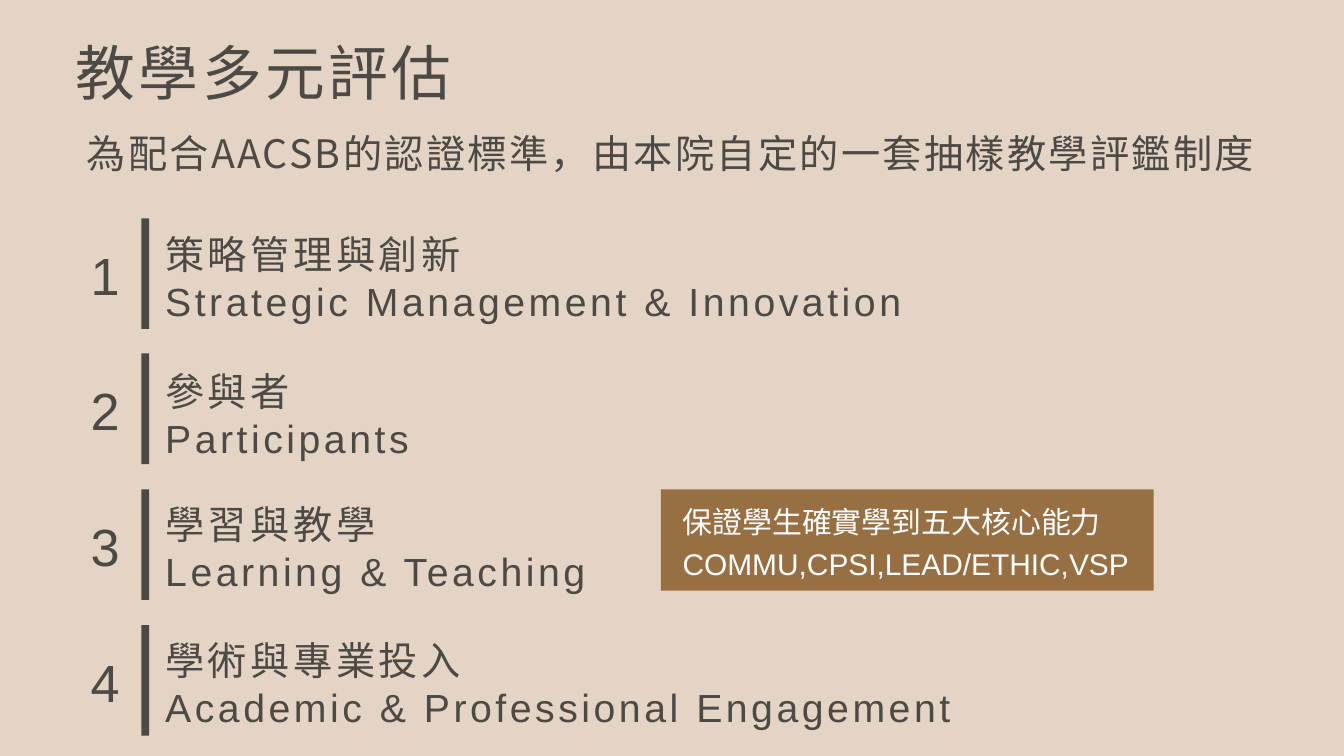
from lxml import etree
from pptx import Presentation
from pptx.dml.color import RGBColor
from pptx.enum.shapes import MSO_SHAPE
from pptx.enum.text import PP_ALIGN
from pptx.oxml.ns import qn
from pptx.util import Pt

PX = 9525
RECTANGLE = MSO_SHAPE.RECTANGLE
LEFT, RIGHT, JUSTIFY = PP_ALIGN.LEFT, PP_ALIGN.RIGHT, PP_ALIGN.JUSTIFY
SAND = RGBColor(0xE4, 0xD4, 0xC5)
CHARCOAL = RGBColor(0x4D, 0x4A, 0x46)
BROWN = RGBColor(0x98, 0x6F, 0x43)
WHITE = RGBColor(0xFF, 0xFF, 0xFF)
CHINESE, ENGLISH = "Noto Sans CJK SC", "Arial"

TITLE = {"size": 64, "line": 78.7, "tracking": 380}
INTRO = {"size": 42, "line": 51.7, "tracking": 250}
NUMBER = {"size": 56, "line": 68.9, "tracking": 340, "align": RIGHT}
HEADING = {"size": 42, "line": 68, "tracking": 380, "align": JUSTIFY}
NOTE = {"size": 32, "line": 44.8, "color": WHITE}

STANDARDS = [
    ("策略管理與創新", "Strategic Management & Innovation", -7),
    ("參與者", "Participants", -4),
    ("學習與教學", "Learning & Teaching", -8),
    ("學術與專業投入", "Academic & Professional Engagement", -7),
]
FIRST_ROW = 312
FOUR_ROWS_SPAN = 581


class SlideBuilder:
    def __init__(self, slide):
        self.slide = slide
        fill = slide.background.fill
        fill.solid()
        fill.fore_color.rgb = SAND

    def rectangle(self, left, top, width, height, color):
        box = [value * PX for value in (left, top, width, height)]
        shape = self.slide.shapes.add_shape(RECTANGLE, *box)
        shape.shadow.inherit = False
        shape.fill.solid()
        shape.fill.fore_color.rgb = color
        shape.line.fill.background()

    def text(self, left, top, width, height, lines, style):
        box = [value * PX for value in (left, top, width, height)]
        frame = self.slide.shapes.add_textbox(*box).text_frame
        frame_format = {"word_wrap": True, "margin_left": 0, "margin_top": 0,
                        "margin_right": 0, "margin_bottom": 0}
        for name, value in frame_format.items():
            setattr(frame, name, value)
        for index, (words, font_name) in enumerate(lines):
            paragraph = frame.add_paragraph() if index else frame.paragraphs[0]
            paragraph.alignment = style.get("align", LEFT)
            paragraph.line_spacing = Pt(style["line"])
            run = paragraph.add_run()
            run.text = words
            font_format = {"size": Pt(style["size"]), "name": font_name}
            for name, value in font_format.items():
                setattr(run.font, name, value)
            run.font.color.rgb = style.get("color", CHARCOAL)
            properties = run._r.get_or_add_rPr()
            properties.set("spc", str(style.get("tracking", 0)))
            east_asian = etree.SubElement(properties, qn("a:ea"))
            east_asian.set("typeface", font_name)


def main():
    presentation = Presentation()
    presentation.slide_width = 1920 * PX
    presentation.slide_height = 1080 * PX
    builder = SlideBuilder(presentation.slides.add_slide(presentation.slide_layouts[6]))

    builder.text(108, 49, 1079, 107, [("教學多元評估", CHINESE)], TITLE)
    intro = "為配合AACSB的認證標準，由本院自定的一套抽樣教學評鑑制度"
    builder.text(124, 183, 1673, 70, [(intro, CHINESE)], INTRO)

    for index, (chinese, english, offset) in enumerate(STANDARDS):
        top = FIRST_ROW + index * FOUR_ROWS_SPAN // 3
        builder.text(124, top + 33, 47, 86, [(str(index + 1), ENGLISH)], NUMBER)
        builder.rectangle(202, top, 11, 158, CHARCOAL)
        builder.text(236, top + offset, 521, 91, [(chinese, CHINESE)], HEADING)
        builder.text(236, top + offset + 67, 1190, 82, [(english, ENGLISH)], HEADING)

    builder.rectangle(944, 699, 704, 145, BROWN)
    builder.text(975, 711, 713, 121, [
        ("保證學生確實學到五大核心能力", CHINESE),
        ("COMMU,CPSI,LEAD/ETHIC,VSP", ENGLISH),
    ], NOTE)
    presentation.save("out.pptx")


if __name__ == "__main__":
    main()
